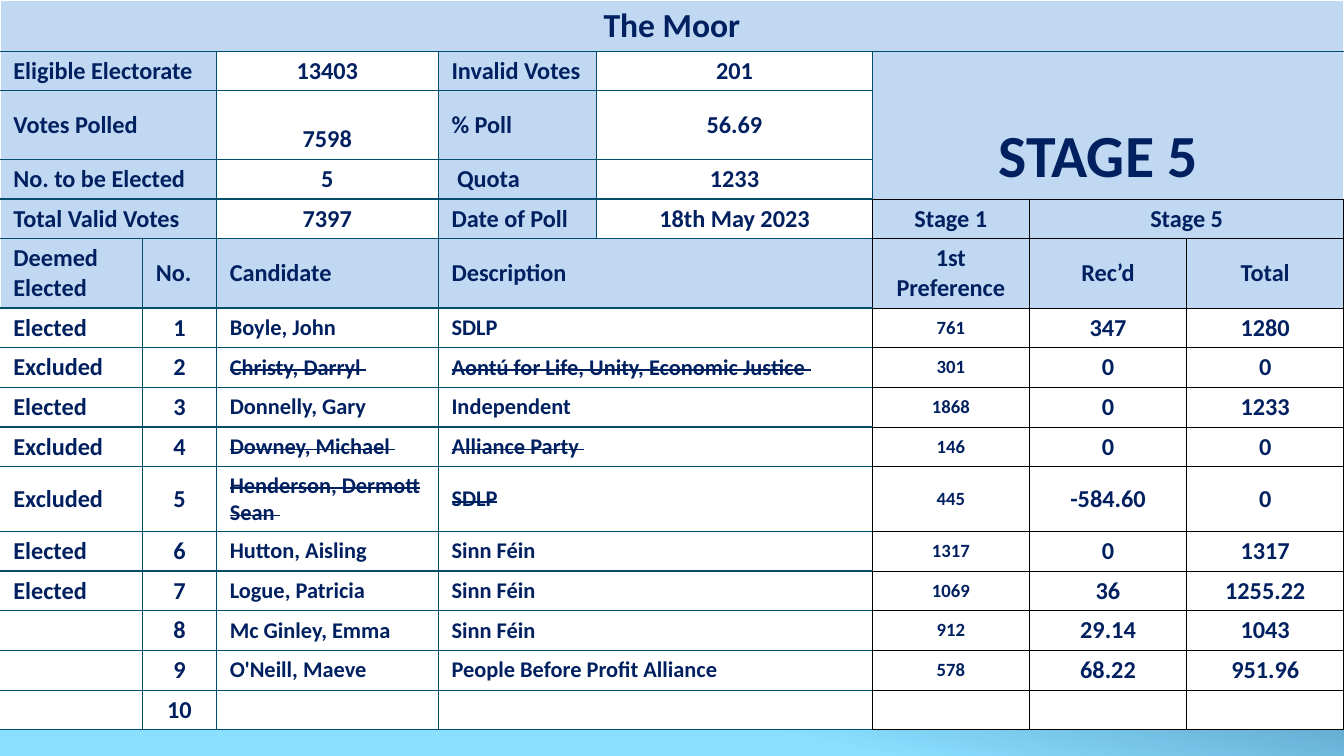
"""Build the stage 5 count sheet for The Moor electoral area."""
from dataclasses import dataclass

from lxml import etree
from pptx import Presentation
from pptx.dml.color import RGBColor
from pptx.enum.text import MSO_ANCHOR, PP_ALIGN
from pptx.oxml.ns import qn
from pptx.table import Table, _Cell
from pptx.util import Inches, Pt

LEFT, CENTER = PP_ALIGN.LEFT, PP_ALIGN.CENTER
MIDDLE, BOTTOM = MSO_ANCHOR.MIDDLE, MSO_ANCHOR.BOTTOM
COLORS = {
    "navy": "002060",
    "header": "C1D8F2",
    "white": "FFFFFF",
    "teal": "004E6C",
    "black": "000000",
    "sky": "8ADFFF",
    "deep": "0D3868",
}
FONT = "Calibri"
BODY, DETAIL, SMALL = 13, 12, 10
SIDE_MARGIN = Inches(0.1)
END_MARGIN = Inches(0.3) // 8
EDGE_WIDTHS = {"white": 1, "teal": 0.75, "black": 0.5}
COLUMN_WIDTHS = [1.06, 0.55, 1.65, 1.18, 2.05, 1.17, 1.17, 1.17]
ROW_HEIGHT = 0.28
TALL_ROWS = {0: 0.38, 2: 0.51, 5: 0.51, 10: 0.48}
STAGE_COLUMN = 5
STAGE_ROW = 4
HEADING_ROW = 5


@dataclass(frozen=True)
class Run:
    text: str
    size: float = BODY
    strike: bool = False


@dataclass(frozen=True)
class Entry:
    row: int
    column: int
    runs: tuple[Run, ...]
    fill: str = "white"
    align: PP_ALIGN = CENTER
    rows: int = 1
    columns: int = 1
    anchor: MSO_ANCHOR = MIDDLE


@dataclass(frozen=True)
class Summary:
    label: str
    value: str
    second_label: str
    second_value: str
    anchor: MSO_ANCHOR = MIDDLE


@dataclass(frozen=True)
class Candidate:
    status: str
    name: str
    party: str
    first_preference: str
    received: str
    total: str


SUMMARIES = [
    Summary("Eligible Electorate", "13403", "Invalid Votes", "201"),
    Summary("Votes Polled", "7598", "% Poll", "56.69", BOTTOM),
    Summary("No. to be Elected", "5", " Quota", "1233"),
    Summary("Total Valid Votes", "7397", "Date of Poll", "18th May 2023"),
]
CANDIDATES = [
    Candidate("Elected", "Boyle, John", "SDLP", "761", "347", "1280"),
    Candidate("Excluded", "Christy, Darryl ", "Aontú for Life, Unity, Economic Justice ",
              "301", "0", "0"),
    Candidate("Elected", "Donnelly, Gary", "Independent", "1868", "0", "1233"),
    Candidate("Excluded", "Downey, Michael ", "Alliance Party ", "146", "0", "0"),
    Candidate("Excluded", "Henderson, Dermott Sean ", "SDLP", "445", "-584.60", "0"),
    Candidate("Elected", "Hutton, Aisling", "Sinn Féin", "1317", "0", "1317"),
    Candidate("Elected", "Logue, Patricia", "Sinn Féin", "1069", "36", "1255.22"),
    Candidate("", "Mc Ginley, Emma", "Sinn Féin", "912", "29.14", "1043"),
    Candidate("", "O'Neill, Maeve", "People Before Profit Alliance", "578", "68.22", "951.96"),
    Candidate("", "", "", "", "", ""),
]


def header_entries() -> list[Entry]:
    entries = [
        Entry(0, 0, (Run("The Moor", 18),), "header", columns=8),
        Entry(1, STAGE_COLUMN, (Run("STAGE 5 ", 32), Run(" ")), "header",
              rows=3, columns=3, anchor=BOTTOM),
        Entry(STAGE_ROW, 5, (Run("Stage 1"),), "header"),
        Entry(STAGE_ROW, 6, (Run("Stage 5"),), "header", columns=2),
    ]
    for row, summary in enumerate(SUMMARIES, start=1):
        entries += [
            Entry(row, 0, (Run(summary.label),), "header", LEFT, columns=2),
            Entry(row, 2, (Run(summary.value),), anchor=summary.anchor),
            Entry(row, 3, (Run(summary.second_label),), "header", LEFT),
            Entry(row, 4, (Run(summary.second_value),)),
        ]
    headings = {0: "Deemed Elected", 1: "No.", 2: "Candidate", 3: "Description",
                5: "1st Preference", 6: "Rec’d", 7: "Total"}
    for column, heading in headings.items():
        entries.append(Entry(HEADING_ROW, column, (Run(heading),), "header",
                             LEFT if column < STAGE_COLUMN else CENTER,
                             columns=2 if column == 3 else 1))
    return entries


def candidate_entries(number: int, candidate: Candidate) -> list[Entry]:
    row = HEADING_ROW + number
    struck = candidate.status == "Excluded"
    return [
        Entry(row, 0, (Run(candidate.status),), align=LEFT),
        Entry(row, 1, (Run(str(number)),)),
        Entry(row, 2, (Run(candidate.name, DETAIL, struck),), align=LEFT),
        Entry(row, 3, (Run(candidate.party, DETAIL, struck),), align=LEFT, columns=2),
        Entry(row, 5, (Run(candidate.first_preference, SMALL),)),
        Entry(row, 6, (Run(candidate.received),)),
        Entry(row, 7, (Run(candidate.total),)),
    ]


def edge_colors(entry: Entry) -> dict[str, str]:
    end = entry.column + entry.columns
    if entry.row == 0:
        return {"L": "white", "R": "white", "T": "white", "B": "teal"}
    if entry.column >= STAGE_COLUMN:
        if entry.row < STAGE_ROW:
            return {"L": "teal", "R": "white", "T": "teal", "B": "black"}
        return dict.fromkeys("LRTB", "black")
    beside_stage = end == STAGE_COLUMN and entry.row >= STAGE_ROW
    return {"L": "teal" if entry.column else "white",
            "R": "black" if beside_stage else "teal", "T": "teal", "B": "teal"}


def draw_edge(cell: _Cell, side: str, color: str) -> None:
    line = etree.SubElement(cell._tc.get_or_add_tcPr(), qn(f"a:ln{side}"),
                            w=str(Pt(EDGE_WIDTHS[color])))
    fill = etree.SubElement(line, qn("a:solidFill"))
    etree.SubElement(fill, qn("a:srgbClr"), val=COLORS[color])


def write_runs(cell: _Cell, entry: Entry) -> None:
    paragraph = cell.text_frame.paragraphs[0]
    paragraph.alignment = entry.align
    for part in entry.runs:
        if not part.text:
            continue
        run = paragraph.add_run()
        run.text = part.text
        run.font.name = FONT
        run.font.size = Pt(part.size)
        run.font.bold = True
        run.font.color.rgb = RGBColor.from_string(COLORS["navy"])
        if part.strike:
            run.font._element.set("strike", "sngStrike")


def draw_entry(table: Table, entry: Entry) -> None:
    last_row = entry.row + entry.rows - 1
    last_column = entry.column + entry.columns - 1
    origin = table.cell(entry.row, entry.column)
    if entry.rows * entry.columns > 1:
        origin.merge(table.cell(last_row, last_column))
    colors = edge_colors(entry)
    for row in range(entry.row, last_row + 1):
        for column in range(entry.column, last_column + 1):
            cell = table.cell(row, column)
            outer = {"L": column == entry.column, "R": column == last_column,
                     "T": row == entry.row, "B": row == last_row}
            for side, color in colors.items():
                if outer[side] or not cell.is_spanned:
                    draw_edge(cell, side, color)
            cell.fill.solid()
            cell.fill.fore_color.rgb = RGBColor.from_string(COLORS[entry.fill])
            cell.margin_left = cell.margin_right = SIDE_MARGIN
            cell.margin_top = cell.margin_bottom = END_MARGIN
            cell.vertical_anchor = entry.anchor
            if cell.is_spanned or not entry.runs[0].text:
                paragraph = cell.text_frame.paragraphs[0]._p
                etree.SubElement(paragraph, qn("a:endParaRPr"), sz=str(BODY * 100))
    write_runs(origin, entry)


def main() -> None:
    deck = Presentation()
    deck.slide_width = Inches(10)
    deck.slide_height = Inches(10) * 9 // 16
    slide = deck.slides.add_slide(deck.slide_layouts[6])
    backdrop = slide.background.fill
    backdrop.gradient()
    backdrop.gradient_angle = 258
    for stop, (position, color) in zip(backdrop.gradient_stops, [(0.42, "deep"), (0.82, "sky")]):
        stop.position = position
        stop.color.rgb = RGBColor.from_string(COLORS[color])

    row_count = HEADING_ROW + 1 + len(CANDIDATES)
    heights = [TALL_ROWS.get(row, ROW_HEIGHT) for row in range(row_count)]
    table = slide.shapes.add_table(row_count, len(COLUMN_WIDTHS), Inches(0), Inches(0),
                                   Inches(10), Inches(sum(heights))).table
    table.first_row = table.horz_banding = False
    for column, width in zip(table.columns, COLUMN_WIDTHS):
        column.width = Inches(width)
    for row, height in zip(table.rows, heights):
        row.height = Inches(height)

    entries = header_entries()
    for number, candidate in enumerate(CANDIDATES, start=1):
        entries += candidate_entries(number, candidate)
    for entry in entries:
        draw_entry(table, entry)
    deck.save("out.pptx")


if __name__ == "__main__":
    main()
